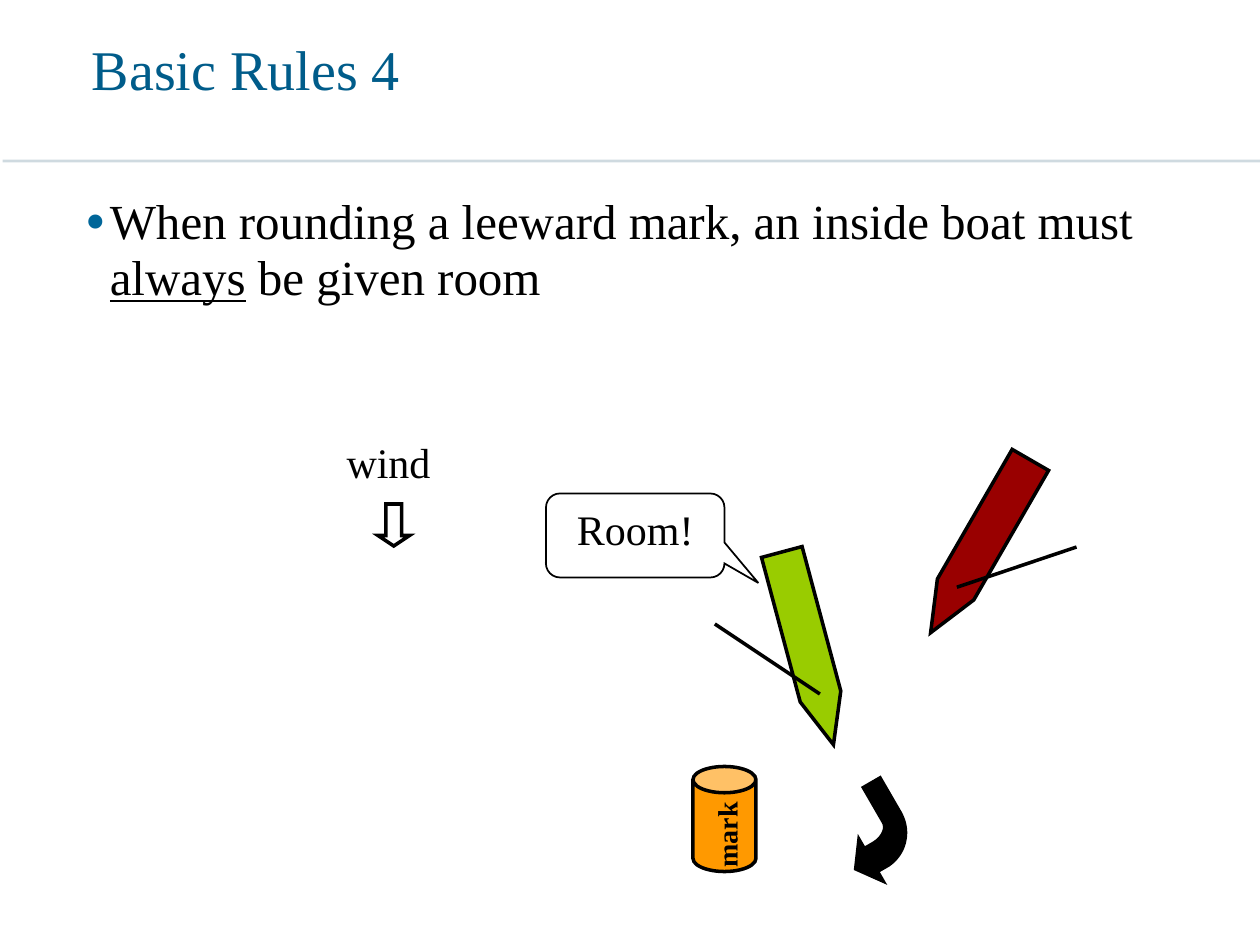
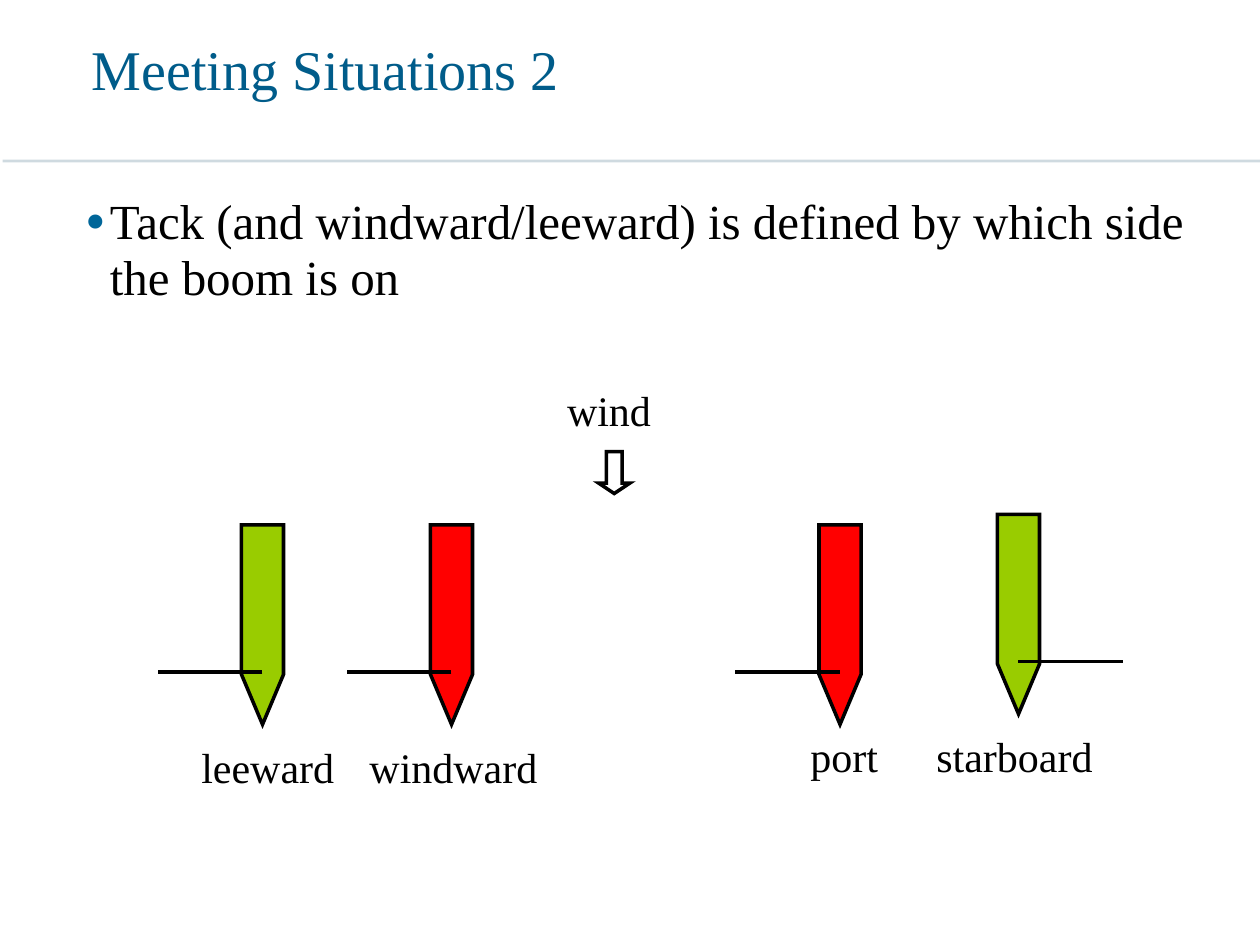
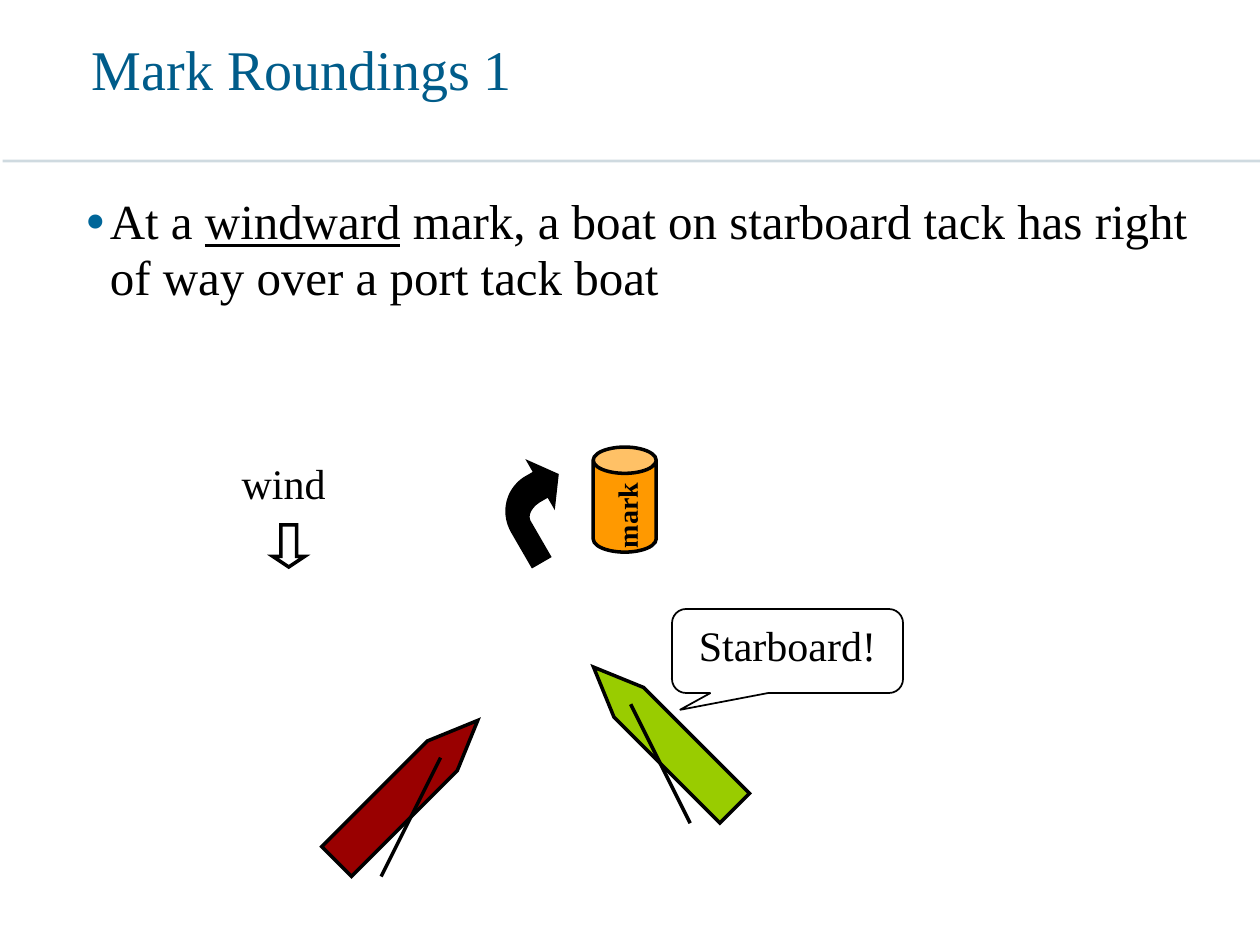
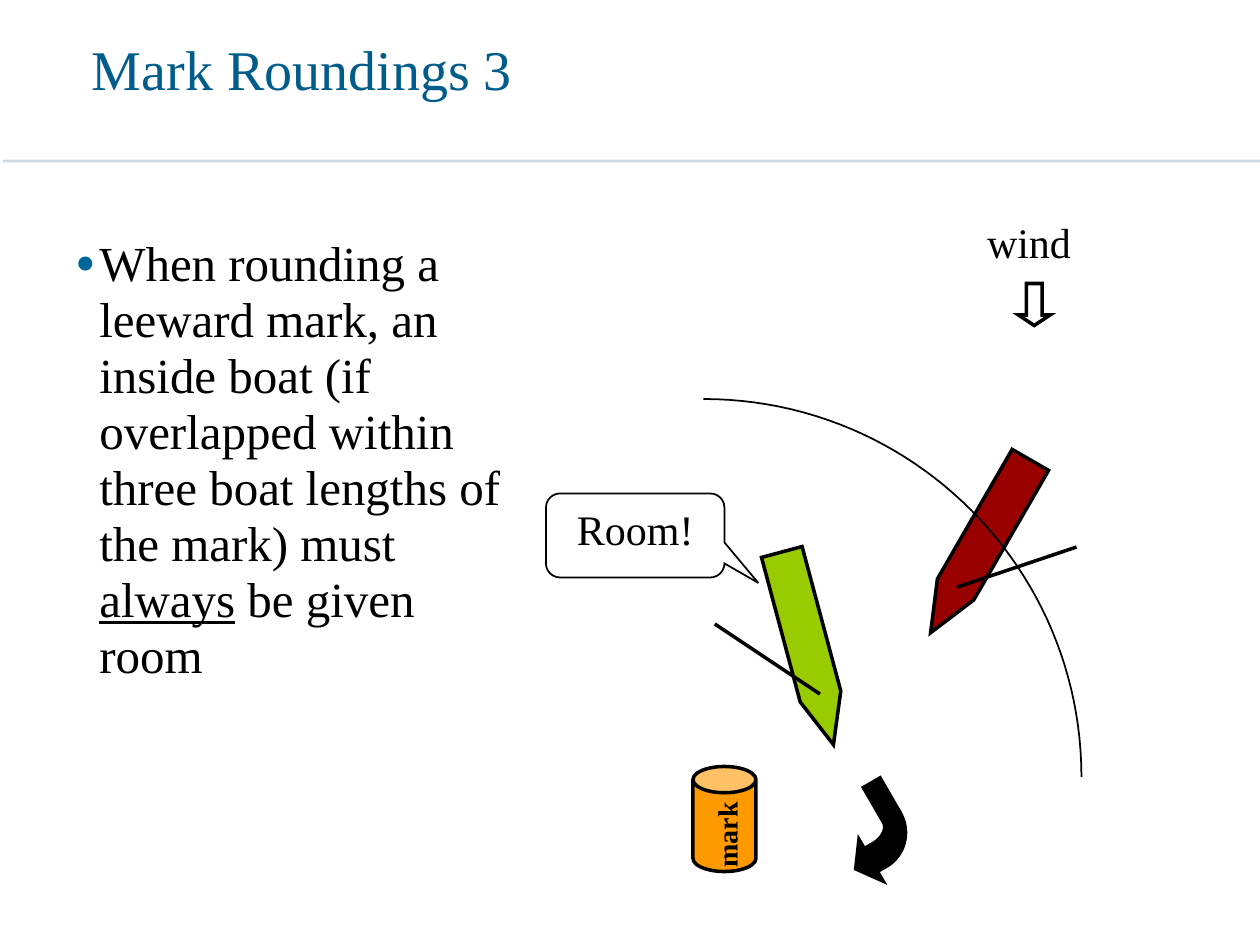
from math import cos, radians, sin

from lxml.etree import SubElement
from pptx import Presentation
from pptx.dml.color import RGBColor as RGB
from pptx.enum.shapes import MSO_CONNECTOR as LINK, MSO_SHAPE as FORM
from pptx.enum.text import (MSO_ANCHOR as ANCHOR, MSO_AUTO_SIZE as FIT,
                            PP_ALIGN as ALIGN)
from pptx.oxml.ns import qn
from pptx.util import Pt

INK = {
    "title": "005C8A", "dot": "006699", "rule": "A1B7C3", "black": "000000",
    "green": "99CC00", "maroon": "990000", "red": "FF0000", "orange": "FF9900",
}
FONT = "Times New Roman"
HULL = (114, 24)
MAST = 27  # from the middle of the hull towards the bow


def color(name):
    return RGB.from_string(INK[name])


def write(shape, words, size=24, ink="black", bold=False, align=ALIGN.LEFT,
          wrap=True, dot=False, lead=None):
    """Fill a shape with one paragraph; words between underscores are underlined."""
    frame = shape.text_frame
    frame.word_wrap = wrap
    if not wrap:
        frame.auto_size = FIT.SHAPE_TO_FIT_TEXT
    frame.vertical_anchor = ANCHOR.TOP
    para = frame.paragraphs[0]
    para.alignment = align
    para.line_spacing = lead
    for i, part in enumerate(words.split("_")):
        run = para.add_run()
        run.text = part
        font = run.font
        font.name, font.size, font.bold = FONT, Pt(size), bold
        font.color.rgb = color(ink)
        if i % 2:
            font.underline = True
    if dot:
        add_dot(para)


def add_dot(para):
    props = para._p.get_or_add_pPr()
    props.set("marL", str(Pt(13.68)))
    props.set("indent", str(-Pt(13.68)))
    tint = SubElement(props, qn("a:buClr"))
    SubElement(tint, qn("a:srgbClr"), val=INK["dot"])
    SubElement(props, qn("a:buSzPct"), val="120000")
    SubElement(props, qn("a:buFont"), typeface=FONT)
    SubElement(props, qn("a:buChar"), char="•")


def label(slide, words, x, y, w, h, spin=0, **style):
    box = slide.shapes.add_textbox(Pt(x), Pt(y), Pt(w), Pt(h))
    box.rotation = spin
    write(box, words, **style)


def paint(shape, fill=None, width=2, spin=0):
    shape.shadow.inherit = False
    shape.rotation = spin
    if fill:
        shape.fill.solid()
        shape.fill.fore_color.rgb = color(fill)
    else:
        shape.fill.background()
    shape.line.color.rgb = color("black")
    shape.line.width = Pt(width)
    edge = shape._element.spPr.find(qn("a:ln"))
    SubElement(edge, qn("a:miter"), lim="800000")


def draw(slide, form, x, y, w, h, adjust, **style):
    shape = slide.shapes.add_shape(form, Pt(x), Pt(y), Pt(w), Pt(h))
    for i, value in enumerate(adjust):
        shape.adjustments[i] = value
    paint(shape, **style)
    return shape


def line(slide, start, end, ink="black", width=2, alpha=None):
    spots = [Pt(v) for v in (*start, *end)]
    link = slide.shapes.add_connector(LINK.STRAIGHT, *spots)
    link.line.color.rgb = color(ink)
    link.line.width = Pt(width)
    if alpha:
        tint = link._element.spPr.find(".//" + qn("a:srgbClr"))
        SubElement(tint, qn("a:alpha"), val=str(alpha * 1000))
    SubElement(link._element.spPr, qn("a:effectLst"))


def curve(a, b, c, d, steps=24):
    """Points of a cubic curve from a to d."""
    for i in range(steps + 1):
        t = i / steps
        u = 1 - t
        yield tuple(u**3 * p + 3 * u * u * t * q + 3 * u * t * t * r + t**3 * s
                    for p, q, r, s in zip(a, b, c, d))


def outline(slide, x, y, points, close=True, **style):
    spots = [(Pt(x + px), Pt(y + py)) for px, py in points]
    pen = slide.shapes.build_freeform(*spots[0])
    pen.add_line_segments(spots[1:], close=close)
    paint(pen.convert_to_shape(), width=1, **style)


def turn(slide, x, y, spin):
    """Bent arrow that shows the way round the mark."""
    points = [
        (0, 38.6), (11.2, 54), (11.2, 46.6),
        *curve((16.3, 46.6), (29.2, 46.6), (39.2, 36.2), (39.2, 23.4)),
        (39.2, 0), (27.2, 0),
        *curve((27.2, 23.4), (27.2, 27.4), (22.2, 30.5), (16.3, 30.5)),
        (11.2, 30.5), (11.2, 23.4),
    ]
    outline(slide, x, y, points, fill="black", spin=spin)


def boat(slide, x, y, head, fill, boom):
    """Hull centred on x, y with its bow towards head; boom is an offset."""
    w, h = HULL
    draw(slide, FORM.PENTAGON, x - w / 2, y - h / 2, w, h, [1.188],
         fill=fill, spin=head)
    mast = (x + MAST * cos(radians(head)), y + MAST * sin(radians(head)))
    line(slide, mast, (mast[0] + boom[0], mast[1] + boom[1]))


def wind(slide, x, y):
    draw(slide, FORM.DOWN_ARROW, x + 42, y + 42, 18, 24, [0.5, 0.333])
    label(slide, "wind", x, y, 96, 36, align=ALIGN.CENTER)


def buoy(slide, x, y):
    draw(slide, FORM.CAN, x, y, 36, 60, [0.417], fill="orange")
    label(slide, "mark", x - 13.5, y + 25.5, 66, 27, spin=270, size=16,
          bold=True, align=ALIGN.CENTER)


def call(slide, words, x, y, w, tail):
    bubble = draw(slide, FORM.ROUNDED_RECTANGULAR_CALLOUT, x, y, w, 48,
                  [*tail, 0.167], width=1)
    write(bubble, words, align=ALIGN.CENTER)


def page(deck, title, words, area=(42, 108, 662, 366)):
    slide = deck.slides.add_slide(deck.slide_layouts[6])
    line(slide, (1.5, 92), (721.5, 92), ink="rule", width=1.55, alpha=50)
    label(slide, title, 45.5, 20.5, 621, 72, size=32, ink="title", lead=0.9)
    label(slide, words, *area, size=28, dot=True, lead=0.95)
    return slide


def leeward(slide):
    """Two boats on their way to the leeward mark."""
    turn(slide, 480, 450, 330)
    buoy(slide, 396, 438)
    call(slide, "Room!", 312, 282, 102, (0.69, 0.565))
    boat(slide, 461.5, 370.5, 75, "green", (-60, -40))
    boat(slide, 560.3, 312.2, 120, "maroon", (68.4, -23))


def main():
    deck = Presentation()
    deck.slide_width, deck.slide_height = Pt(720), Pt(540)

    slide = page(deck, "Basic Rules 4", "When rounding a leeward mark, an "
                 "inside boat must _always_ be given room")
    leeward(slide)
    wind(slide, 174, 246)

    slide = page(deck, "Meeting Situations 2", "Tack (and windward/leeward) "
                 "is defined by which side the boom is on")
    wind(slide, 300, 216)
    for x, fill in ((150, "green"), (258, "red"), (480, "red")):
        boat(slide, x, 357, 90, fill, (-60, 0))
    boat(slide, 582, 351, 90, "green", (60, 0))
    for words, x, y, w in (("leeward", 108, 420, 92), ("windward", 204, 420, 112),
                           ("port", 456, 414, 54), ("starboard", 528, 414, 105)):
        label(slide, words, x, y, w, 36, wrap=False)

    slide = page(deck, "Mark Roundings 1", "At a _windward_ mark, a boat on "
                 "starboard tack has right of way over a port tack boat")
    boat(slide, 232.7, 452, 315, "maroon", (-34, 68))
    wind(slide, 114, 258)
    boat(slide, 379.5, 421.5, 225, "green", (34, 68))
    call(slide, "Starboard!", 384, 348, 132, (-0.466, 0.701))
    turn(slide, 288, 264, 150)
    buoy(slide, 339, 255.5)

    slide = page(deck, "Mark Roundings 3", "When rounding a leeward mark, an "
                 "inside boat (if overlapped within three boat lengths of the "
                 "mark) must _always_ be given room", (36, 132, 264, 378))
    leeward(slide)
    wind(slide, 540, 120)
    zone = curve((0, 216), (119.3, 216), (216, 119.3), (216, 0), steps=48)
    outline(slide, 402, 228, zone, close=False, spin=270)

    deck.save("out.pptx")


if __name__ == "__main__":
    main()
